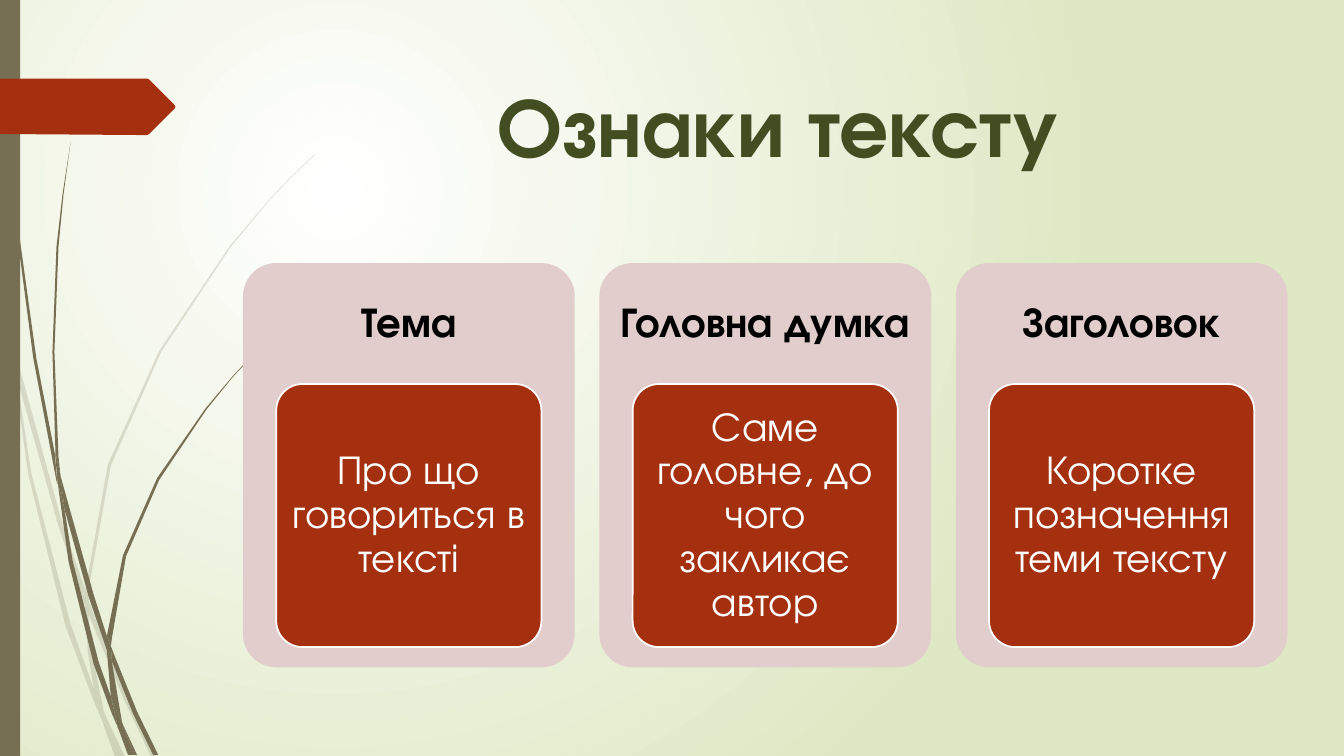
import dataclasses

import pptx
import pptx.dml.color
import pptx.enum.shapes
import pptx.enum.text
import pptx.oxml
import pptx.oxml.ns
import pptx.util

# Content
TITLE = "Ознаки тексту"
FEATURES = [
    ("Тема", "Про що говориться в тексті"),
    ("Головна думка", "Саме головне, до чого закликає автор"),
    ("Заголовок", "Коротке позначення теми тексту"),
]

# Decoration: outlines in px, 100 px to the inch
PALE_GRASS = [
    [(11, 350), (9, 322), (0, 282), (0, 299), (10, 344)],
    [(58, 522), (84, 599), (85, 586), (62, 520), (14, 345), (17, 376)],
    [(92, 607), (88, 596), (88, 610), (123, 694), (150, 751), (155, 751), (127, 692)],
    [(119, 751), (124, 751), (105, 711)],
    [(93, 683), (70, 619), (31, 469), (17, 376), (11, 350), (28, 470), (65, 621),
     (92, 693), (101, 714), (99, 707)],
    [(84, 599), (87, 646), (93, 683), (96, 692), (105, 711), (103, 706), (91, 646),
     (88, 610), (88, 608)],
    [(88, 584), (110, 462), (160, 349), (229, 245), (268, 198), (290, 175), (312, 154),
     (312, 153), (289, 175), (268, 197), (228, 244), (158, 348), (107, 461), (85, 584),
     (85, 586), (88, 596)],
    [(101, 714), (114, 751), (119, 751)],
    [(88, 608), (88, 610), (88, 596), (85, 586), (84, 599)],
    [(96, 692), (93, 683), (99, 707), (101, 714), (119, 751), (105, 711)],
]
DARK_GRASS = [
    [(7, 110), (17, 233), (33, 355), (56, 477), (57, 481), (55, 457), (55, 453),
     (36, 355), (19, 232), (8, 109), (5, 48), (4, 0), (3, 0), (4, 48)],
    [(88, 592), (106, 645), (106, 633), (106, 631), (93, 590), (60, 472), (64, 505)],
    [(113, 649), (110, 641), (111, 656), (132, 708), (152, 749), (157, 749), (136, 706)],
    [(110, 691), (98, 657), (72, 556), (64, 505), (57, 477), (68, 557), (93, 659),
     (111, 708), (117, 722), (116, 717)],
    [(60, 472), (58, 453), (54, 349), (58, 245), (63, 193), (70, 141), (62, 193),
     (56, 245), (52, 349), (55, 449)],
    [(133, 749), (136, 749), (122, 719)],
    [(57, 477), (64, 505), (60, 472), (55, 449), (55, 453)],
    [(111, 633), (125, 552), (158, 476), (205, 406), (231, 374), (245, 359), (261, 344),
     (260, 344), (245, 358), (231, 373), (204, 405), (156, 474), (122, 551), (106, 631),
     (110, 641)],
    [(117, 722), (127, 749), (131, 749)],
    [(106, 645), (110, 691), (116, 706), (122, 719), (121, 716), (111, 656), (109, 651)],
    [(106, 645), (109, 651), (111, 656), (110, 641), (106, 631), (106, 633)],
    [(116, 706), (110, 691), (116, 717), (117, 722), (130, 749), (133, 749), (122, 719)],
]
ARROW = [(173, 108), (148, 133), (146, 134), (136, 134), (0, 133), (0, 78), (146, 78),
         (148, 79), (173, 104), (174, 106)]


@dataclasses.dataclass(frozen=True)
class Theme:
    font: str = "TeX Gyre Adventor"
    olive: str = "766F54"
    rust: str = "A53010"
    pink: str = "E1CDCC"
    title: str = "424D22"
    black: str = "000000"
    white: str = "FFFFFF"
    pale_green: str = "DFE8C4"
    title_size: int = 60
    heading_size: int = 30
    body_size: int = 29


THEME = Theme()
PX = 9144
SLIDE_W, SLIDE_H = 1333, 750
ROW_LEFT, ROW_RIGHT, ROW_TOP = 241, 1277, 261
PANEL_W, PANEL_H, HEADING_H = 329, 401, 120
CARD_W, CARD_H = 263, 261
SHAPES = pptx.enum.shapes.MSO_SHAPE
ANCHOR = pptx.enum.text.MSO_ANCHOR


def rgb(code):
    return pptx.dml.color.RGBColor.from_string(code)


def emu(*lengths):
    return [round(length * PX) for length in lengths]


def paint(shape, colour, outline=None):
    shape.shadow.inherit = False
    shape.fill.solid()
    shape.fill.fore_color.rgb = rgb(colour)
    if outline:
        shape.line.color.rgb = rgb(outline)
        shape.line.width = pptx.util.Pt(1.25)
    else:
        shape.line.fill.background()


def draw_outline(shapes, points, colour, opacity=100):
    builder = shapes.build_freeform(*points[0], scale=PX)
    builder.add_line_segments(points[1:], close=True)
    outline = builder.convert_to_shape()
    paint(outline, colour)
    if opacity < 100:
        fill = outline.element.find(".//" + pptx.oxml.ns.qn("a:srgbClr"))
        alpha = fill.makeelement(pptx.oxml.ns.qn("a:alpha"), {"val": str(opacity * 1000)})
        fill.append(alpha)


def add_box(shapes, kind, box, colour, outline=None):
    shape = shapes.add_shape(kind, *emu(*box))
    if kind == SHAPES.ROUNDED_RECTANGLE:
        shape.adjustments[0] = 0.1
    paint(shape, colour, outline)
    return shape


def write(shape, text, size, colour, bold=False, anchor=ANCHOR.MIDDLE, insets=(10, 5),
          spacing=None):
    frame = shape.text_frame
    frame.word_wrap = True
    frame.auto_size = pptx.enum.text.MSO_AUTO_SIZE.NONE
    frame.vertical_anchor = anchor
    frame.margin_left = frame.margin_right = insets[0] * PX
    frame.margin_top = frame.margin_bottom = insets[1] * PX
    paragraph = frame.paragraphs[0]
    paragraph.alignment = pptx.enum.text.PP_ALIGN.CENTER
    paragraph.line_spacing = spacing
    run = paragraph.add_run()
    run.text = text
    run.font.name = THEME.font
    run.font.size = pptx.util.Pt(size)
    run.font.bold = bold
    run.font.color.rgb = rgb(colour)


def set_background(slide):
    fill = slide.background.fill
    fill.gradient()
    for stop, colour in zip(fill.gradient_stops, (THEME.white, THEME.pale_green)):
        stop.color.rgb = rgb(colour)
    for stop, position in zip(fill.gradient_stops, (0, 1)):
        stop.position = position
    linear = slide.element.find(".//" + pptx.oxml.ns.qn("a:lin"))
    radial = pptx.oxml.parse_xml(
        f'<a:path {pptx.oxml.ns.nsdecls("a")} path="circle">'
        '<a:fillToRect l="50000" t="50000" r="100000" b="100000"/></a:path>')
    linear.getparent().replace(linear, radial)


def add_feature(shapes, left, heading, body):
    add_box(shapes, SHAPES.ROUNDED_RECTANGLE, (left, ROW_TOP, PANEL_W, PANEL_H), THEME.pink)
    label = shapes.add_textbox(*emu(left, ROW_TOP, PANEL_W, HEADING_H))
    write(label, heading, THEME.heading_size, THEME.black, bold=True, insets=(12, 12),
          spacing=0.9)
    card_left = left + (PANEL_W - CARD_W) / 2
    card = add_box(shapes, SHAPES.ROUNDED_RECTANGLE,
                   (card_left, ROW_TOP + HEADING_H, CARD_W, CARD_H), THEME.rust, THEME.white)
    write(card, body, THEME.body_size, THEME.white, insets=(8, 6), spacing=0.9)


def main():
    deck = pptx.Presentation()
    deck.slide_width, deck.slide_height = emu(SLIDE_W, SLIDE_H)
    slide = deck.slides.add_slide(deck.slide_layouts[5])
    set_background(slide)

    # Grass, side bar and arrow
    for blades, opacity in ((PALE_GRASS, 20), (DARK_GRASS, 100)):
        tuft = slide.shapes.add_group_shape()
        for blade in blades:
            draw_outline(tuft.shapes, blade, THEME.olive, opacity)
    add_box(slide.shapes, SHAPES.RECTANGLE, (0, 0, 20, SLIDE_H), THEME.olive)
    draw_outline(slide.shapes, ARROW, THEME.rust)

    # Title
    title = slide.shapes.title
    title.left, title.top, title.width, title.height = emu(284, 68, 975, 140)
    write(title, TITLE, THEME.title_size, THEME.title, bold=True, anchor=ANCHOR.TOP)

    # Feature columns
    features = slide.shapes.add_group_shape()
    pitch = (ROW_RIGHT - ROW_LEFT - PANEL_W) / (len(FEATURES) - 1)
    for column, (heading, body) in enumerate(FEATURES):
        add_feature(features.shapes, ROW_LEFT + column * pitch, heading, body)

    deck.save("out.pptx")


if __name__ == "__main__":
    main()
